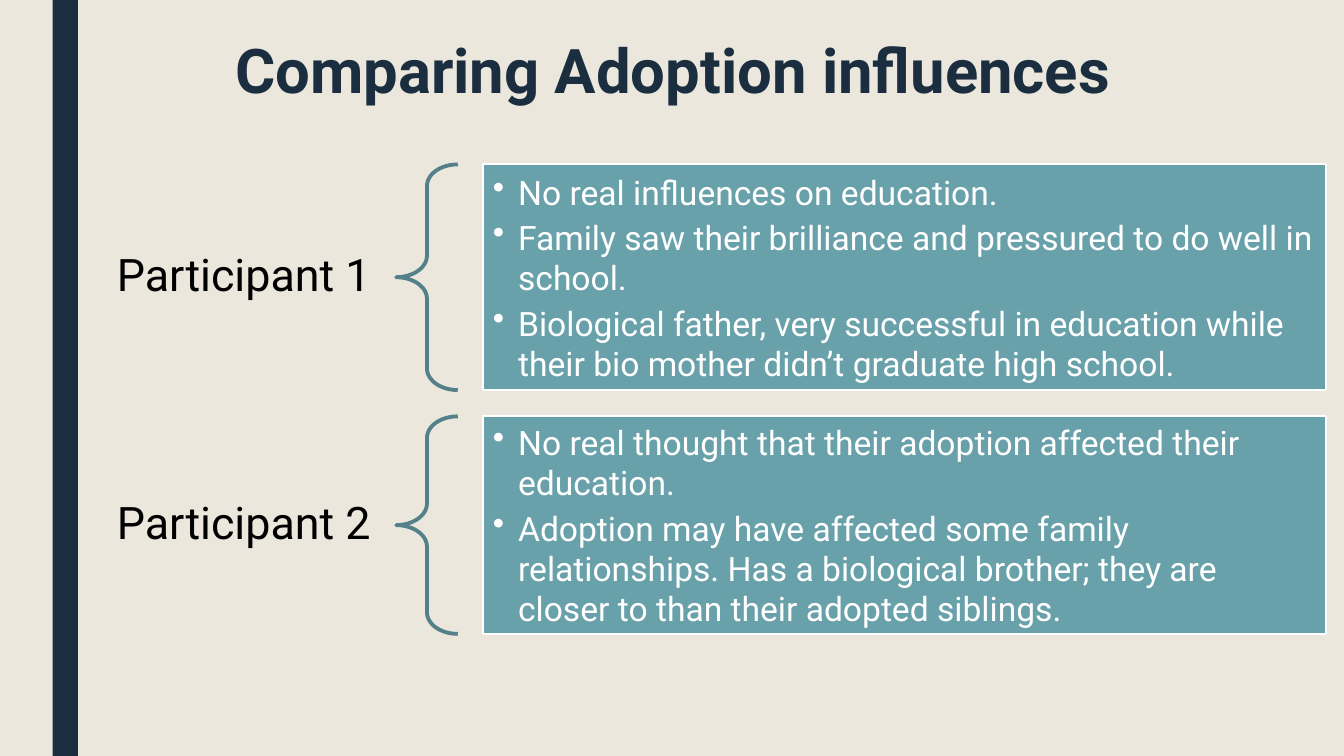
from pptx import Presentation
from pptx.dml.color import RGBColor
from pptx.enum.shapes import MSO_SHAPE
from pptx.enum.text import MSO_ANCHOR, PP_ALIGN
from pptx.oxml.xmlchemy import OxmlElement
from pptx.util import Pt

CREAM = RGBColor(0xEB, 0xE7, 0xDD)
NAVY = RGBColor(0x1A, 0x2E, 0x40)
TEAL = RGBColor(0x69, 0xA1, 0xAB)
DARK_TEAL = RGBColor(0x54, 0x81, 0x89)
WHITE = RGBColor(0xFF, 0xFF, 0xFF)
BLACK = RGBColor(0, 0, 0)

ROWS = [
    ("Participant 1", 117.4, 161.2, [
        "No real influences on education.",
        "Family saw their brilliance and pressured to do well in school.",
        "Biological father, very successful in education while their bio mother "
        "didn’t graduate high school.",
    ]),
    ("Participant 2", 297.4, 155.4, [
        "No real thought that their adoption affected their education.",
        "Adoption may have affected some family relationships. Has a biological "
        "brother; they are closer to than their adopted siblings.",
    ]),
]


class SlideBuilder:
    font_name = "Roboto"

    def __init__(self, slide):
        self.slide = slide

    def shape(self, kind, left, top, width, height, fill=None, line=None, weight=1):
        shape = self.slide.shapes.add_shape(
            kind, Pt(left), Pt(top), Pt(width), Pt(height))
        shape.shadow.inherit = False
        if fill is None:
            shape.fill.background()
        else:
            shape.fill.solid()
            shape.fill.fore_color.rgb = fill
        if line is None:
            shape.line.fill.background()
        else:
            shape.line.color.rgb = line
            shape.line.width = Pt(weight)
        return shape

    def set_text(self, shape, text, size, color, insets, bold=False,
                 anchor=MSO_ANCHOR.MIDDLE, align=PP_ALIGN.LEFT, spacing=1.0):
        frame = shape.text_frame
        frame.text = text
        frame.word_wrap = True
        frame.vertical_anchor = anchor
        side, edge = insets
        frame.margin_left = frame.margin_right = Pt(side)
        frame.margin_top = frame.margin_bottom = Pt(edge)
        for paragraph in frame.paragraphs:
            paragraph.alignment = align
            paragraph.line_spacing = spacing
            for run in paragraph.runs:
                run.font.name = self.font_name
                run.font.size = Pt(size)
                run.font.bold = bold
                run.font.color.rgb = color

    def text(self, text, left, top, width, height, size, color, insets, **style):
        box = self.slide.shapes.add_textbox(
            Pt(left), Pt(top), Pt(width), Pt(height))
        self.set_text(box, text, size, color, insets, **style)

    def bullet_panel(self, items, left, top, width, height):
        panel = self.shape(MSO_SHAPE.RECTANGLE, left, top, width, height,
                           TEAL, WHITE, 1.5)
        self.set_text(panel, "\n".join(items), 24, WHITE, (7.2, 7.2))
        for paragraph in panel.text_frame.paragraphs:
            paragraph.space_after = Pt(3.6)
            properties = paragraph._p.get_or_add_pPr()
            properties.set("marL", str(Pt(18)))
            properties.set("indent", str(Pt(-18)))
            bullet = OxmlElement("a:buChar")
            bullet.set("char", "•")
            properties.append(bullet)

    def brace(self, left, top, width, height):
        brace = self.shape(MSO_SHAPE.LEFT_BRACE, left, top, width, height,
                           line=DARK_TEAL, weight=2.75)
        brace.adjustments[0] = 0.35
        brace.adjustments[1] = 0.5


def main():
    presentation = Presentation()
    presentation.slide_width, presentation.slide_height = Pt(960), Pt(540)
    slide = presentation.slides.add_slide(presentation.slide_layouts[6])
    slide.background.fill.solid()
    slide.background.fill.fore_color.rgb = CREAM
    builder = SlideBuilder(slide)

    # Side bar and title
    builder.shape(MSO_SHAPE.RECTANGLE, 37.6, 0, 18, 540, NAVY)
    builder.text("Comparing Adoption influences", 160.8, 26, 756, 116.6, 44, NAVY,
                 (7.2, 3.6), bold=True, anchor=MSO_ANCHOR.TOP, spacing=0.89)

    # One row per participant: label, brace, bullet panel
    label_height = 101.6
    for name, top, height, items in ROWS:
        builder.text(name, 62, top + (height - label_height) / 2, 221, label_height,
                     32, BLACK, (18, 6.5), align=PP_ALIGN.RIGHT, spacing=0.9)
        builder.brace(283, top, 44, height)
        builder.bullet_panel(items, 345, top, 602, height)

    presentation.save("out.pptx")


if __name__ == "__main__":
    main()
